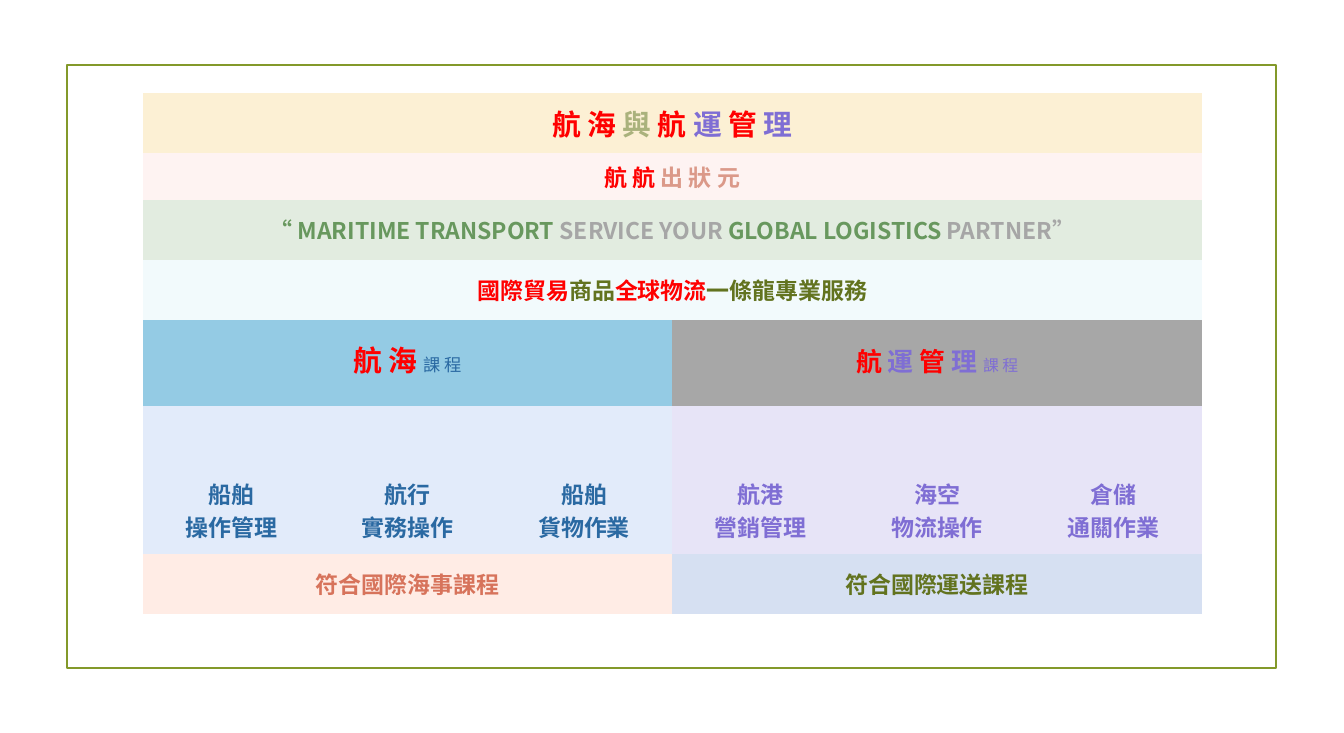
from lxml.etree import SubElement
from pptx import Presentation
from pptx.dml.color import RGBColor
from pptx.enum.shapes import MSO_SHAPE
from pptx.enum.text import MSO_ANCHOR, MSO_AUTO_SIZE, PP_ALIGN
from pptx.oxml.ns import qn
from pptx.util import Pt

FONT = "Noto Sans CJK SC"
NO_GRID_STYLE = "{2D5ABB26-0587-4C30-8999-92F81FD0307C}"
COLORS = {
    "frame": "83992A", "red": "FF0000", "sage": "AAB27C", "violet": "7F6ED4",
    "rose": "DB9989", "green": "68985E", "gray": "A6A6A6", "olive": "62731F",
    "navy": "2A69A2", "coral": "D7735B",
    "cream": "FCF0D4", "blush": "FEF3F2", "mint": "E2ECE0", "ice": "F2FAFC",
    "sky": "94CBE4", "steel": "A7A7A7", "pale blue": "E2EBFA",
    "pale violet": "E7E4F7", "peach": "FFECE5", "pale navy": "D6E0F2",
}

TABLE_LEFT, TABLE_TOP = 99.5, 64.8
COLUMN_WIDTH, COLUMN_COUNT = 122.85, 6
HALF = COLUMN_COUNT // 2
HALF_WIDTH = HALF * COLUMN_WIDTH
ROW_HEIGHTS = [41.8, 30.2, 41.8, 41.8, 59.8, 41.8, 61.2, 41.8]

# Banners across the whole table: fill, text size, (text, color) runs
BANNERS = [
    ("cream", 20, [("航 海 ", "red"), ("與 ", "sage"), ("航 ", "red"),
                   ("運 ", "violet"), ("管 ", "red"), ("理", "violet")]),
    ("blush", 16, [("航 航 ", "red"), ("出 狀 元", "rose")]),
    ("mint", 16, [("“ MARITIME TRANSPORT ", "green"), ("SERVICE YOUR ", "gray"),
                  ("GLOBAL LOGISTICS ", "green"), ("PARTNER”", "gray")]),
    ("ice", 16, [("國際貿易", "red"), ("商品", "olive"),
                 ("全球物流", "red"), ("一條龍專業服務", "olive")]),
]
HEADING_ROW, SPACER_ROW, COURSE_ROW, STANDARD_ROW = range(4, 8)
PROGRAMS = [
    {"heading fill": "sky", "course fill": "pale blue", "course color": "navy",
     "courses": [("船舶", "操作管理"), ("航行", "實務操作"), ("船舶", "貨物作業")],
     "standard": ("符合國際海事課程", "coral"), "standard fill": "peach"},
    {"heading fill": "steel", "course fill": "pale violet", "course color": "violet",
     "courses": [("航港", "營銷管理"), ("海空", "物流操作"), ("倉儲", "通關作業")],
     "standard": ("符合國際運送課程", "olive"), "standard fill": "pale navy"},
]


def rgb(name):
    return RGBColor.from_string(COLORS[name])


def write_runs(paragraph, runs, size):
    """Write (text, color) runs in bold, or (text, color, size) runs in regular weight."""
    paragraph.alignment = PP_ALIGN.CENTER
    for text, color, *small_size in runs:
        run = paragraph.add_run()
        run.text = text
        font = run.font
        font.size = Pt(small_size[0] if small_size else size)
        font.bold = not small_size
        font.color.rgb = rgb(color)
        font.name = FONT
        SubElement(run._r.get_or_add_rPr(), qn("a:ea"), typeface=FONT)


def fill_cell(cell, fill, lines=(), size=16, margins=(9.4, 4.7)):
    cell.fill.solid()
    cell.fill.fore_color.rgb = rgb(fill)
    cell.vertical_anchor = MSO_ANCHOR.MIDDLE
    cell.margin_left = cell.margin_right = Pt(margins[0])
    cell.margin_top = cell.margin_bottom = Pt(margins[1])
    for index, runs in enumerate(lines):
        text_frame = cell.text_frame
        paragraph = text_frame.add_paragraph() if index else text_frame.paragraphs[0]
        write_runs(paragraph, runs, size)


def merge_cells(table, row, first, count):
    cell = table.cell(row, first)
    cell.merge(table.cell(row, first + count - 1))
    return cell


def add_frame(slide):
    frame = slide.shapes.add_shape(
        MSO_SHAPE.RECTANGLE, Pt(46.8), Pt(45.2), Pt(841.4), Pt(419.6))
    frame.shadow.inherit = False
    frame.fill.background()
    frame.line.color.rgb = rgb("frame")
    frame.line.width = Pt(1.25)


def add_plain_table(slide):
    table = slide.shapes.add_table(
        len(ROW_HEIGHTS), COLUMN_COUNT, Pt(TABLE_LEFT), Pt(TABLE_TOP),
        Pt(COLUMN_COUNT * COLUMN_WIDTH), Pt(sum(ROW_HEIGHTS))).table
    table.first_row = table.horz_banding = False
    table._tbl.tblPr.find(qn("a:tableStyleId")).text = NO_GRID_STYLE
    for column in table.columns:
        column.width = Pt(COLUMN_WIDTH)
    for row, height in zip(table.rows, ROW_HEIGHTS):
        row.height = Pt(height)
    return table


def fill_program(table, first, program):
    for row, fill in ((HEADING_ROW, "heading fill"), (SPACER_ROW, "course fill")):
        fill_cell(merge_cells(table, row, first, HALF), program[fill])
    for column, course in enumerate(program["courses"], first):
        lines = [[(line, program["course color"])] for line in course]
        fill_cell(table.cell(COURSE_ROW, column), program["course fill"], lines,
                  margins=(2, 0))
    fill_cell(merge_cells(table, STANDARD_ROW, first, HALF),
              program["standard fill"], [[program["standard"]]])


def add_heading(slide, left, top, height, runs, size):
    heading = slide.shapes.add_textbox(Pt(left), Pt(top), Pt(HALF_WIDTH), Pt(height))
    text_frame = heading.text_frame
    text_frame.word_wrap = True
    text_frame.auto_size = MSO_AUTO_SIZE.SHAPE_TO_FIT_TEXT
    write_runs(text_frame.paragraphs[0], runs, size)


def main():
    presentation = Presentation()
    presentation.slide_width, presentation.slide_height = Pt(935.43), Pt(510.24)
    slide = presentation.slides.add_slide(presentation.slide_layouts[6])
    add_frame(slide)

    table = add_plain_table(slide)
    for row, (fill, size, runs) in enumerate(BANNERS):
        fill_cell(merge_cells(table, row, 0, COLUMN_COUNT), fill, [runs], size)
    for index, program in enumerate(PROGRAMS):
        fill_program(table, index * HALF, program)

    add_heading(slide, TABLE_LEFT, 235.2, 31.5,
                [("航 海 ", "red"), ("課 程", "navy", 12)], 20)
    add_heading(slide, TABLE_LEFT + HALF_WIDTH, 237.4, 29,
                [("航 ", "red"), ("運 ", "violet"), ("管", "red"),
                 (" 理 ", "violet"), ("課 程", "violet", 11)], 18)
    presentation.save("out.pptx")


if __name__ == "__main__":
    main()
